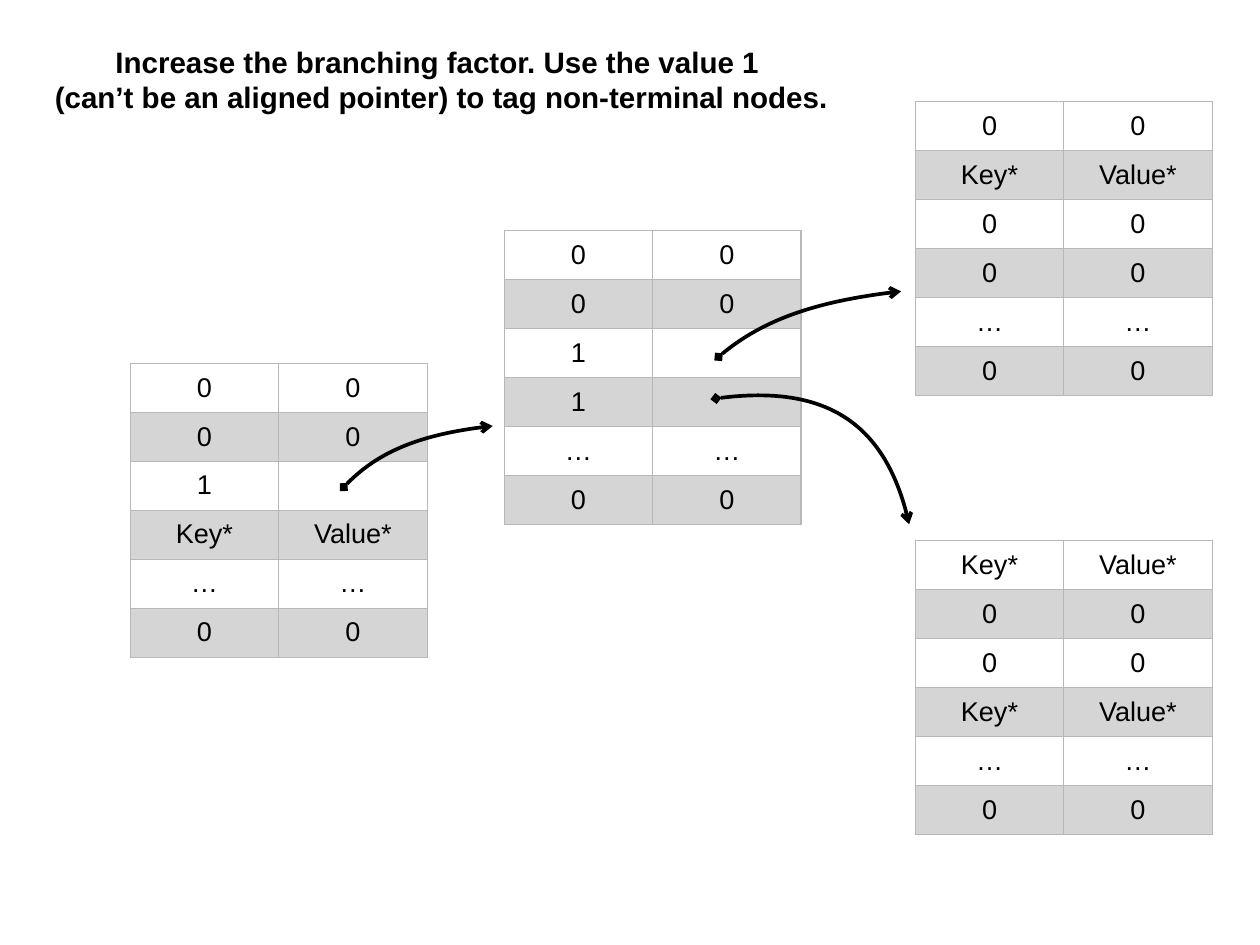
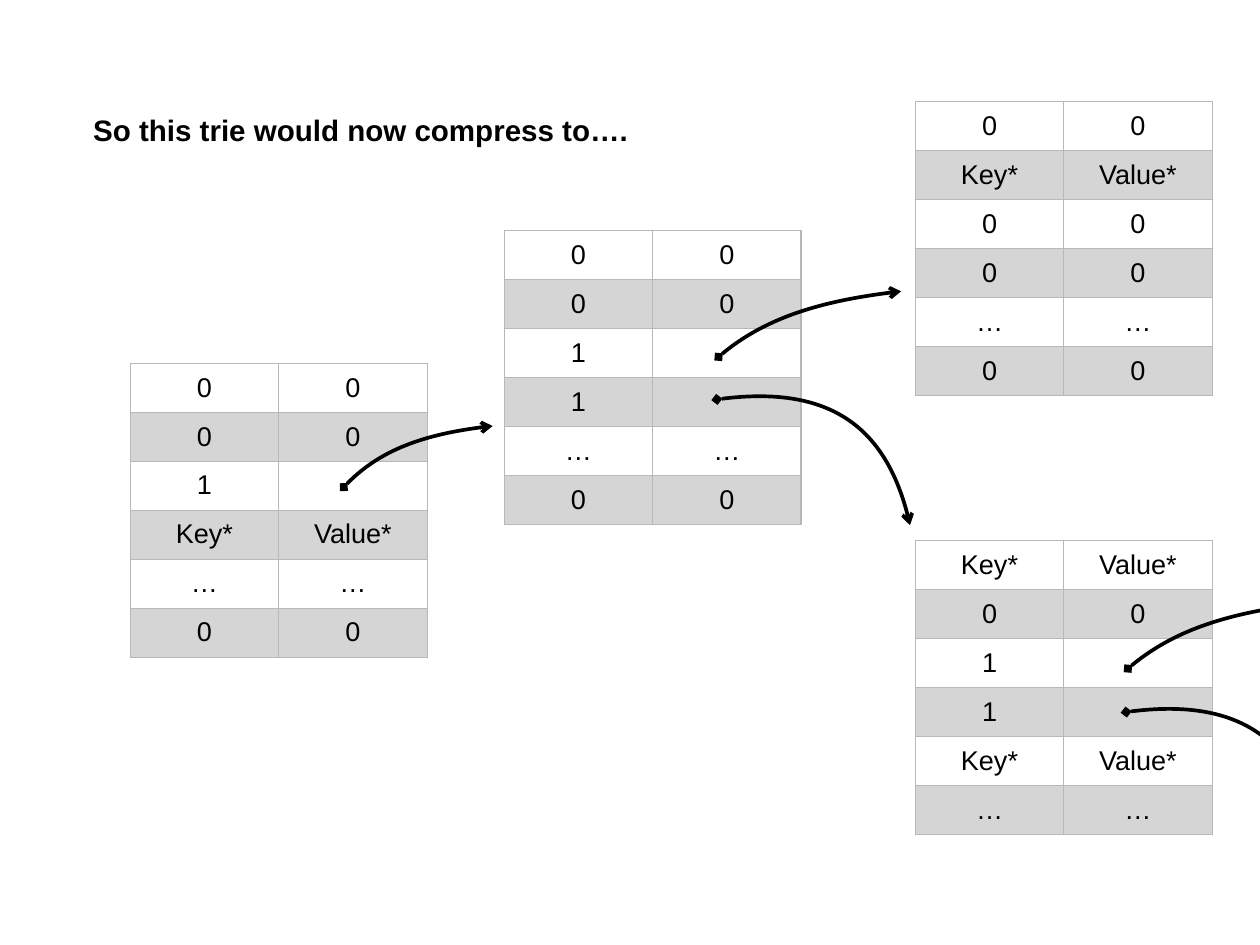
import pptx
import pptx.dml.color
import pptx.enum.text
import pptx.oxml
import pptx.oxml.ns
import pptx.util
from lxml import etree
from pptx.util import Inches, Pt

COLORS = {"text": "000000", "border": "B8B8B8", "odd": "FFFFFF", "even": "D6D5D5"}
FONT = "Arial"
TABLE_W, TABLE_H = 3.35, 3.32
INSET = Inches(0.06)

# Node contents
ZERO, ENTRY, MORE, CHILD = ("0", "0"), ("Key*", "Value*"), ("…", "…"), ("1", "")
ROOT = (1.47, 4.1, [ZERO, ZERO, CHILD, ENTRY, MORE, ZERO])
MIDDLE = (5.69, 2.6, [ZERO, ZERO, CHILD, CHILD, MORE, ZERO])
UPPER = (10.33, 1.15, [ZERO, ENTRY, ZERO, ZERO, MORE, ZERO])
LOWER_LEAF = (10.33, 6.1, [ENTRY, ZERO, ZERO, ENTRY, MORE, ZERO])
LOWER_BRANCH = (10.33, 6.1, [ENTRY, ZERO, CHILD, CHILD, ENTRY, MORE])

# Pointer curves: two control points and the end, relative to the start
SHORT_RISE = [(0.35, -0.38), (0.91, -0.61), (1.68, -0.69)]
RISE = [(0.46, -0.4), (1.14, -0.64), (2.06, -0.74)]
FALL = [(1.21, -0.17), (1.94, 0.31), (2.18, 1.42)]
POINTERS = [(3.88, 5.5, SHORT_RISE), (8.11, 4.03, RISE)]

SLIDES = [
    {
        "title": ["Increase the branching factor. Use the value 1 ",
                  "(can’t be an aligned pointer) to tag non-terminal nodes."],
        "title_at": (0.55, 0.44, 8.86, 0.91),
        "nodes": [ROOT, MIDDLE, LOWER_LEAF, UPPER],
        "pointers": POINTERS + [(8.08, 4.5, FALL)],
    },
    {
        "title": ["So this trie would now compress to…."],
        "title_at": (0.99, 1.21, 6.16, 0.5),
        "nodes": [ROOT, MIDDLE, LOWER_BRANCH, UPPER],
        "pointers": POINTERS + [(8.09, 4.51, FALL), (12.73, 7.55, RISE), (12.71, 8.04, FALL)],
    },
]


def rgb(name):
    return pptx.dml.color.RGBColor.from_string(COLORS[name])


def add_text(p, text, size, bold=False):
    p.alignment = pptx.enum.text.PP_ALIGN.CENTER
    r = p.add_run()
    r.text = text
    r.font.name, r.font.size, r.font.bold = FONT, Pt(size), bold
    r.font.color.rgb = rgb("text")


def set_title(s, lines, box):
    sp = s.shapes.title
    sp.left, sp.top, sp.width, sp.height = map(Inches, box)
    tf = sp.text_frame
    tf.word_wrap = False
    tf.auto_size = pptx.enum.text.MSO_AUTO_SIZE.SHAPE_TO_FIT_TEXT
    tf.vertical_anchor = pptx.enum.text.MSO_ANCHOR.MIDDLE
    tf.margin_left = tf.margin_right = tf.margin_top = tf.margin_bottom = INSET
    for i, line in enumerate(lines):
        add_text(tf.add_paragraph() if i else tf.paragraphs[0], line, 24, True)


def set_borders(cell):
    tcPr = cell._tc.get_or_add_tcPr()
    for i, side in enumerate(("lnL", "lnR", "lnT", "lnB")):
        tcPr.insert(i, pptx.oxml.parse_xml(
            f'<a:{side} {pptx.oxml.ns.nsdecls("a")} w="{Pt(1)}"><a:solidFill>'
            f'<a:srgbClr val="{COLORS["border"]}"/></a:solidFill></a:{side}>'))


def add_node(s, left, top, rows):
    table = s.shapes.add_table(len(rows), 2, Inches(left), Inches(top),
                               Inches(TABLE_W), Inches(TABLE_H)).table
    table.first_row = table.horz_banding = False
    for i, row in enumerate(rows):
        for j, text in enumerate(row):
            cell = table.cell(i, j)
            cell.fill.solid()
            cell.fill.fore_color.rgb = rgb("even" if i % 2 else "odd")
            cell.vertical_anchor = pptx.enum.text.MSO_ANCHOR.MIDDLE
            cell.margin_left = cell.margin_right = INSET
            cell.margin_top = cell.margin_bottom = INSET
            if text:
                add_text(cell.text_frame.paragraphs[0], text, 22)
            set_borders(cell)


def bezier(points, t):
    weights = ((1 - t) ** 3, 3 * t * (1 - t) ** 2, 3 * t * t * (1 - t), t ** 3)
    return tuple(round(sum(w * pt[k] for w, pt in zip(weights, points))) for k in (0, 1))


def add_pointer(s, x, y, curve):
    points = [(Inches(x + dx), Inches(y + dy)) for dx, dy in [(0, 0)] + curve]
    # Sampled points give the true bounds of the curve
    fb = s.shapes.build_freeform(*points[0])
    fb.add_line_segments([bezier(points, i / 40) for i in range(1, 41)], close=False)
    sp = fb.convert_to_shape()
    # One cubic segment replaces the sampled lines
    outline = sp._element.spPr.find(".//" + pptx.oxml.ns.qn("a:path"))
    for line in outline.findall(pptx.oxml.ns.qn("a:lnTo")):
        outline.remove(line)
    cubic = etree.SubElement(outline, pptx.oxml.ns.qn("a:cubicBezTo"))
    for px, py in points[1:]:
        etree.SubElement(cubic, pptx.oxml.ns.qn("a:pt"),
                         x=str(px - sp.left), y=str(py - sp.top))
    sp.shadow.inherit = False
    sp.fill.background()
    sp.line.color.rgb = rgb("text")
    sp.line.width = Pt(3)
    ln = sp.line._get_or_add_ln()
    for end, kind in (("headEnd", "diamond"), ("tailEnd", "arrow")):
        etree.SubElement(ln, pptx.oxml.ns.qn("a:" + end), type=kind)


def main():
    prs = pptx.Presentation()
    prs.slide_width, prs.slide_height = Inches(14.22), Inches(10.67)
    for content in SLIDES:
        s = prs.slides.add_slide(prs.slide_layouts[5])
        set_title(s, content["title"], content["title_at"])
        for node in content["nodes"]:
            add_node(s, *node)
        for pointer in content["pointers"]:
            add_pointer(s, *pointer)
    prs.save("out.pptx")


if __name__ == "__main__":
    main()
